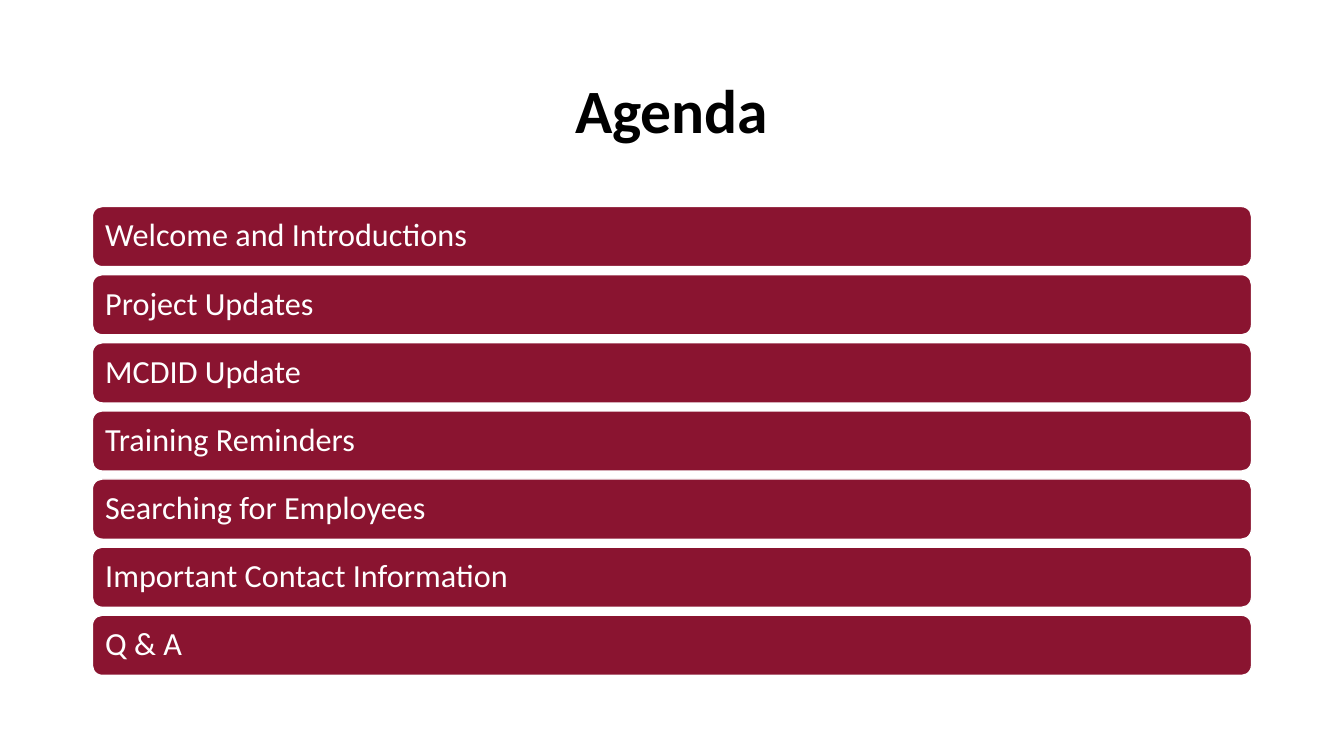
from dataclasses import dataclass

from pptx import Presentation
from pptx.dml.color import RGBColor
from pptx.enum import shapes, text
from pptx.util import Pt


@dataclass(frozen=True)
class Theme:
    font: str = "Calibri"
    ink: str = "000000"
    white: str = "FFFFFF"
    maroon: str = "8A1430"
    title: int = 44
    item: int = 23


THEME = Theme()
LEFT, WIDTH = 66, 828
TOP, HEIGHT, PITCH = 147.5, 43, 48.66
ITEMS = (
    "Welcome and Introductions",
    "Project Updates",
    "MCDID Update",
    "Training Reminders",
    "Searching for Employees",
    "Important Contact Information",
    "Q & A",
)


def assign(target, values):
    for name, value in values.items():
        setattr(target, name, value)


def write(shape, words, size, color, align, bold=False):
    """Put one vertically centred line of text in the shape."""
    frame = shape.text_frame
    assign(frame, {"word_wrap": True,
                   "vertical_anchor": text.MSO_ANCHOR.MIDDLE})
    line = frame.paragraphs[0]
    assign(line, {"alignment": align, "line_spacing": 0.9})
    run = line.add_run()
    run.text = words
    assign(run.font, {"name": THEME.font, "size": Pt(size), "bold": bold})
    run.font.color.rgb = RGBColor.from_string(color)


def add_title(slide, words):
    box = slide.shapes.add_textbox(Pt(LEFT), Pt(28.75), Pt(WIDTH), Pt(104.4))
    write(box, words, THEME.title, THEME.ink, text.PP_ALIGN.CENTER, bold=True)


def add_bar(slide, words, top):
    bar = slide.shapes.add_shape(shapes.MSO_SHAPE.ROUNDED_RECTANGLE,
                                 Pt(LEFT), Pt(top), Pt(WIDTH), Pt(HEIGHT))
    bar.shadow.inherit = False
    bar.fill.solid()
    bar.fill.fore_color.rgb = RGBColor.from_string(THEME.maroon)
    bar.line.color.rgb = RGBColor.from_string(THEME.white)
    bar.line.width = Pt(1)
    write(bar, words, THEME.item, THEME.white, text.PP_ALIGN.LEFT)


def main():
    deck = Presentation()
    assign(deck, {"slide_width": Pt(960), "slide_height": Pt(540)})
    slide = deck.slides.add_slide(deck.slide_layouts[6])
    add_title(slide, "Agenda")
    for row, words in enumerate(ITEMS):
        add_bar(slide, words, TOP + row * PITCH)
    deck.save("out.pptx")


if __name__ == "__main__":
    main()
